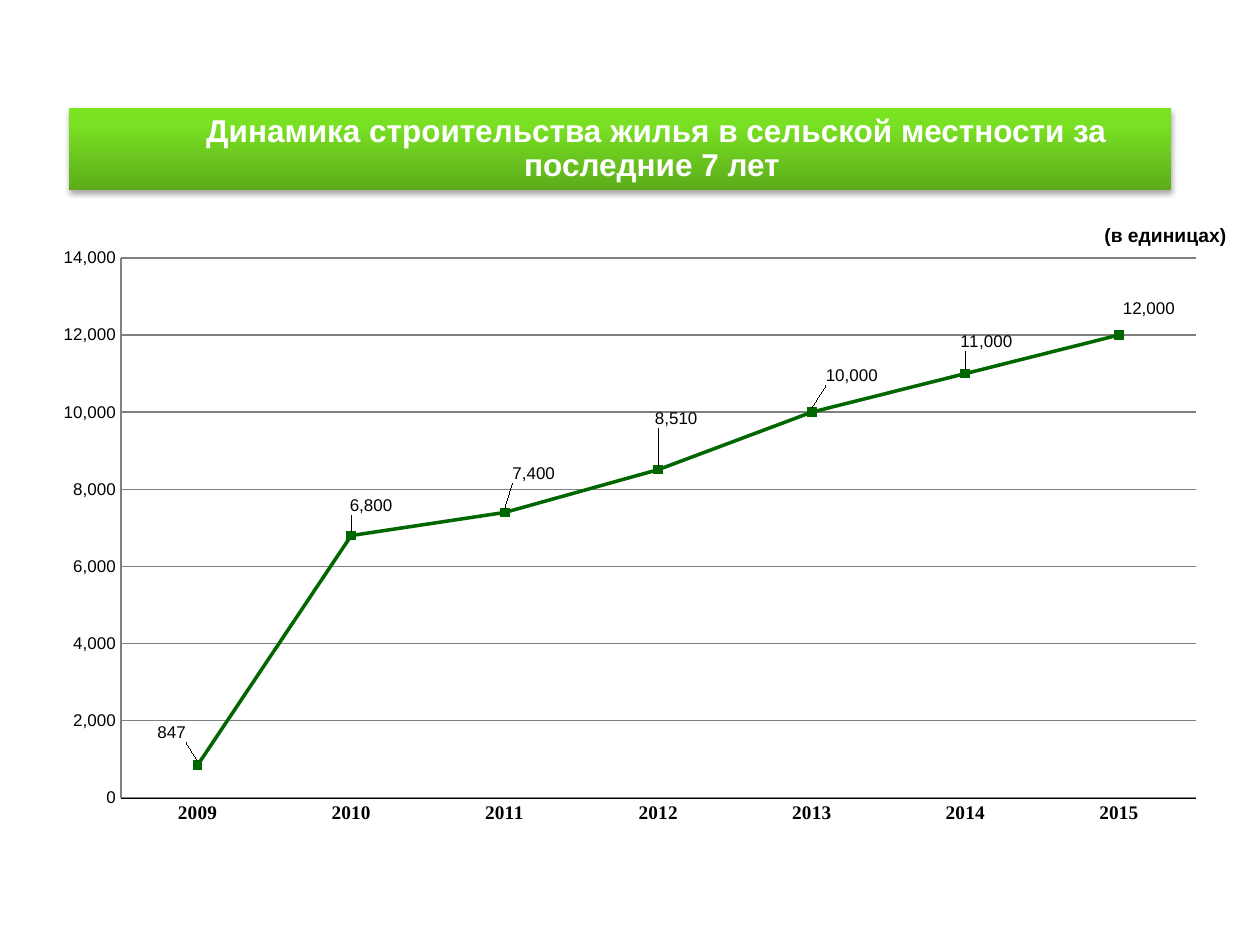
"""Build a slide with a banner title and a line chart of rural housing construction."""
import dataclasses

import pptx
import pptx.chart.data
import pptx.dml.color
import pptx.enum.chart
import pptx.enum.shapes
import pptx.enum.text
import pptx.oxml
import pptx.oxml.ns
import pptx.util


@dataclasses.dataclass(frozen=True)
class Theme:
    sans: str = "Arial"
    serif: str = "Times New Roman"
    black: str = "000000"
    white: str = "FFFFFF"
    grid: str = "808080"
    series: str = "006600"
    banner: tuple = ((0, "5DAD1B"), (80, "79E023"), (100, "79E520"))
    title_size: float = 18
    note_size: float = 11
    chart_size: float = 9.7


def apply(target, values):
    for name, value in values.items():
        setattr(target, name, value)


def px(length):
    return pptx.util.Emu(round(length * 914400 / 126))


def rgb(value):
    return pptx.dml.color.RGBColor.from_string(value)


def element(prefix, markup):
    start, rest = markup.split(">", 1)
    return pptx.oxml.parse_xml(f"{start} {pptx.oxml.ns.nsdecls(prefix)}>{rest}")


def layout(**values):
    items = "".join(f'<c:{name} val="{value}"/>' for name, value in values.items())
    return element("c", f"<c:layout><c:manualLayout>{items}</c:manualLayout></c:layout>")


class SlideBuilder:
    def __init__(self, page, theme):
        self.page = page
        self.theme = theme

    def style_font(self, font, size, color, bold=False, name=None):
        apply(font, {"size": pptx.util.Pt(size), "bold": bold, "name": name or self.theme.sans})
        font.color.rgb = rgb(color)

    def style_line(self, line, color, width):
        line.color.rgb = rgb(color)
        line.width = pptx.util.Pt(width)

    def add_text(self, box, text, size, color, frame_values, para_values):
        frame = box.text_frame
        apply(frame, frame_values)
        para = frame.paragraphs[0]
        apply(para, para_values)
        span = para.add_run()
        span.text = text
        self.style_font(span.font, size, color, bold=True)
        return para

    def banner(self, bounds, text):
        rectangle = pptx.enum.shapes.MSO_SHAPE.RECTANGLE
        box = self.page.shapes.add_shape(rectangle, *map(px, bounds))
        box.shadow.inherit = False
        box.line.fill.background()
        box.fill.gradient()
        properties = box._element.spPr
        gradient = properties.find(pptx.oxml.ns.qn("a:gradFill"))
        stops = "".join(f'<a:gs pos="{place * 1000}"><a:srgbClr val="{color}"/></a:gs>'
                        for place, color in self.theme.banner)
        properties.replace(gradient, element(
            "a", f'<a:gradFill><a:gsLst>{stops}</a:gsLst><a:lin ang="16200000" scaled="0"/></a:gradFill>'))
        effects = properties.find(pptx.oxml.ns.qn("a:effectLst"))
        properties.replace(effects, element(
            "a", '<a:effectLst><a:outerShdw blurRad="40000" dist="23000" dir="5400000" rotWithShape="0">'
            f'<a:srgbClr val="{self.theme.black}"><a:alpha val="35000"/></a:srgbClr>'
            "</a:outerShdw></a:effectLst>"))
        para = self.add_text(
            box, text, self.theme.title_size, self.theme.white,
            {"word_wrap": True, "auto_size": pptx.enum.text.MSO_AUTO_SIZE.SHAPE_TO_FIT_TEXT,
             "vertical_anchor": pptx.enum.text.MSO_ANCHOR.MIDDLE},
            {"alignment": pptx.enum.text.PP_ALIGN.CENTER, "line_spacing": 0.9})
        indent = px(64)
        for name, value in {"marL": indent, "indent": -indent}.items():
            para._p.get_or_add_pPr().set(name, str(value))

    def note(self, bounds, text):
        box = self.page.shapes.add_textbox(*map(px, bounds))
        self.add_text(box, text, self.theme.note_size, self.theme.black,
                      {"word_wrap": False,
                       "auto_size": pptx.enum.text.MSO_AUTO_SIZE.SHAPE_TO_FIT_TEXT}, {})

    def line_chart(self, bounds, plot_bounds, values, label_shifts):
        theme = self.theme
        kinds = pptx.enum.chart
        left, top, width, height = bounds
        data = pptx.chart.data.CategoryChartData(number_format="#,##0")
        data.categories = list(values)
        data.add_series("Series 1", values.values())
        chart = self.page.shapes.add_chart(
            kinds.XL_CHART_TYPE.LINE_MARKERS, *map(px, bounds), data).chart
        apply(chart, {"has_title": False, "has_legend": False})
        self.style_font(chart.font, theme.chart_size, theme.black)

        area = chart._chartSpace.chart.plotArea
        for old in area.findall(pptx.oxml.ns.qn("c:layout")):
            area.remove(old)
        x, y, w, h = plot_bounds
        area.insert(0, layout(layoutTarget="inner", xMode="edge", yMode="edge",
                              x=round((x - left) / width, 4), y=round((y - top) / height, 4),
                              w=round(w / width, 4), h=round(h / height, 4)))

        ticks = {"major_tick_mark": kinds.XL_TICK_MARK.NONE,
                 "minor_tick_mark": kinds.XL_TICK_MARK.NONE}
        apply(chart.category_axis, ticks)
        self.style_font(chart.category_axis.tick_labels.font, theme.note_size,
                        theme.black, bold=True, name=theme.serif)
        self.style_line(chart.category_axis.format.line, theme.black, 0.25)
        axis = chart.value_axis
        apply(axis, {**ticks, "minimum_scale": 0, "maximum_scale": 14000,
                     "major_unit": 2000, "has_major_gridlines": True})
        apply(axis.tick_labels, {"number_format": "#,##0", "number_format_is_linked": False})
        self.style_font(axis.tick_labels.font, theme.chart_size, theme.black)
        self.style_line(axis.format.line, theme.grid, 0.75)
        self.style_line(axis.major_gridlines.format.line, theme.grid, 0.75)

        plot = chart.plots[0]
        plot.vary_by_categories = False
        series = plot.series[0]
        series.smooth = False
        self.style_line(series.format.line, theme.series, 2)
        apply(series.marker, {"style": kinds.XL_MARKER_STYLE.SQUARE, "size": 5})
        series.marker.format.fill.solid()
        series.marker.format.fill.fore_color.rgb = rgb(theme.series)
        self.style_line(series.marker.format.line, theme.series, 0.75)
        for index, (across, down) in enumerate(label_shifts):
            label = series.points[index].data_label
            self.style_font(label.font, theme.chart_size, theme.black)
            label.position = kinds.XL_LABEL_POSITION.ABOVE
            label._get_or_add_dLbl().insert(1, layout(
                x=round(across / width, 4), y=round(down / height, 4)))


def main():
    deck = pptx.Presentation()
    apply(deck, {"slide_width": px(1260), "slide_height": px(945)})
    page = deck.slides.add_slide(deck.slide_layouts[6])
    builder = SlideBuilder(page, Theme())
    builder.line_chart(
        (39, 236, 1181, 601), (121, 258, 1075, 540),
        {"2009": 847, "2010": 6800, "2011": 7400, "2012": 8510,
         "2013": 10000, "2014": 11000, "2015": 12000},
        [(-26, -13), (20, -11), (29, -20), (18, -32), (40, -17), (21, -13), (30, -7)])
    builder.banner((69, 108, 1102, 82),
                   "\t Динамика строительства жилья в сельской местности за последние 7 лет")
    builder.note((1092, 217, 147, 37), "(в единицах)")
    deck.save("out.pptx")


if __name__ == "__main__":
    main()
